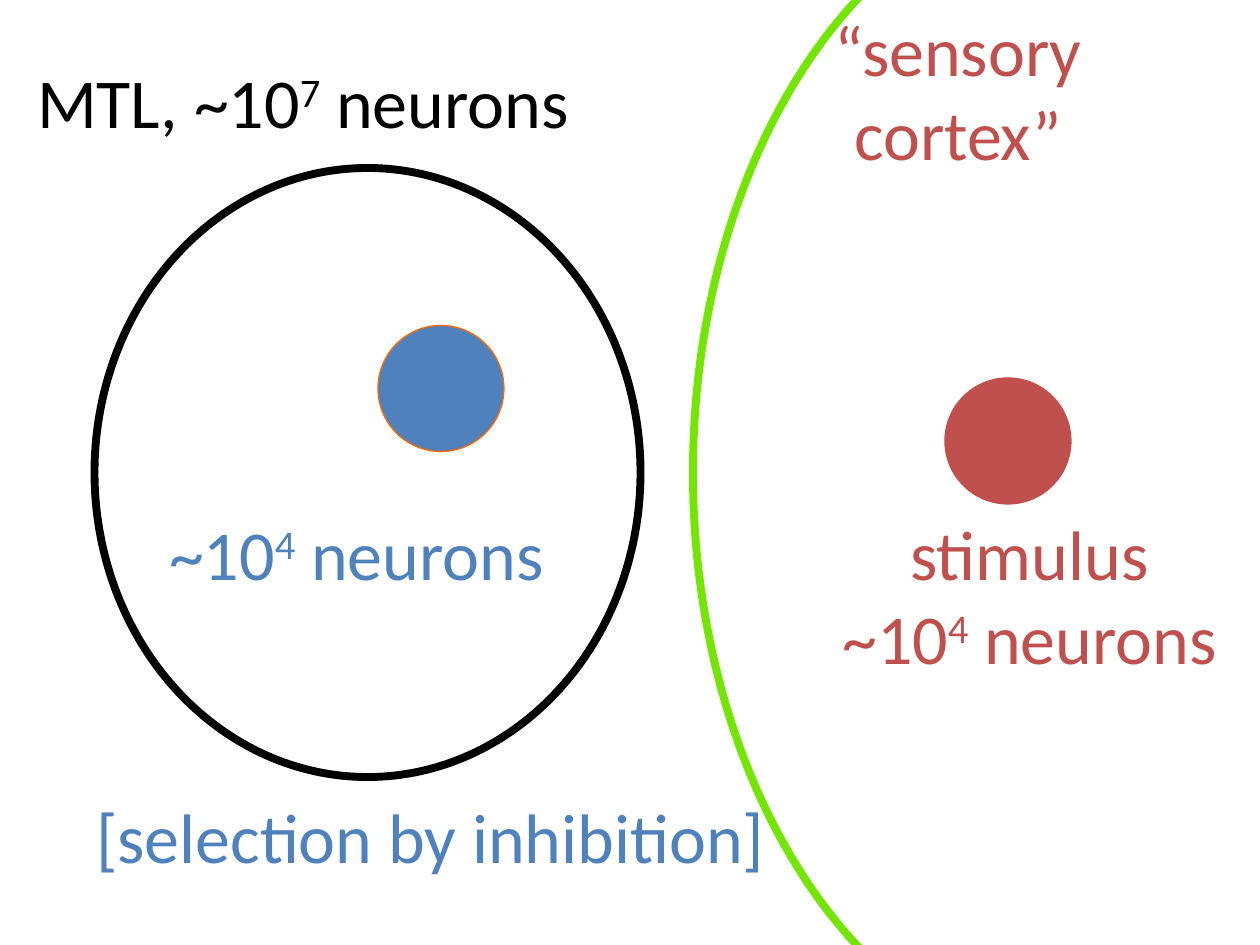
"""Build a slide relating sparse MTL neurons to a stimulus in sensory cortex."""
from dataclasses import dataclass
from typing import Optional

from pptx import Presentation
from pptx.dml.color import RGBColor
from pptx.enum.shapes import MSO_SHAPE
from pptx.enum.text import MSO_AUTO_SIZE, PP_ALIGN
from pptx.util import Emu, Inches, Pt

OVAL = MSO_SHAPE.OVAL
CENTER = PP_ALIGN.CENTER
FIT_SHAPE = MSO_AUTO_SIZE.SHAPE_TO_FIT_TEXT
COLUMNS, ROWS = 120, 90
CELL = Inches(10) // COLUMNS
BLANK_LAYOUT = 6


@dataclass(frozen=True)
class Theme:
    """Colours, type and line weights of the slide."""
    black: str = "000000"
    blue: str = "4F81BD"
    red: str = "C0504D"
    green: str = "73E500"
    orange: str = "FF6600"
    font: str = "Calibri"
    size: float = 40
    superscript: int = 30000
    outline: float = 4.5
    hairline: float = 0.75


@dataclass(frozen=True)
class Area:
    """A rectangle in grid columns and rows."""
    column: float
    row: float
    columns: float
    rows: float

    def lengths(self) -> tuple[Emu, ...]:
        """Return left, top, width and height."""
        cells = (self.column, self.row, self.columns, self.rows)
        return tuple(Emu(round(count * CELL)) for count in cells)


@dataclass(frozen=True)
class Region:
    """An ellipse standing for a group of neurons."""
    area: Area
    line: str
    weight: float
    fill: Optional[str] = None


@dataclass(frozen=True)
class Label:
    """Centred lines of text, with ^ around each superscript."""
    area: Area
    color: str
    lines: tuple[str, ...]


THEME = Theme()

MTL = Region(Area(9, 16, 52, 58), THEME.black, THEME.outline)
STIMULUS = Region(Area(90, 36, 12, 12), THEME.red, THEME.hairline, THEME.red)
CORTEX = Region(Area(66, -11, 77, 112), THEME.green, THEME.outline)
SELECTED = Region(Area(36, 31, 12, 12), THEME.orange, THEME.hairline, THEME.blue)

ITEMS = (
    MTL,
    Label(Area(1.1, 5, 55.5, 9.2), THEME.black, ("MTL, ~10^7^ neurons",)),
    Label(Area(78.1, 0, 26.3, 17.4), THEME.red, ("“sensory", "cortex”")),
    STIMULUS,
    CORTEX,
    SELECTED,
    Label(Area(14.5, 48, 38.9, 9.2), THEME.blue, ("~10^4^ neurons",)),
    Label(Area(78.6, 48, 38.9, 17.4), THEME.red, ("stimulus", "~10^4^ neurons")),
    Label(Area(7.6, 75, 66.8, 9.2), THEME.blue, ("[selection by inhibition]",)),
)


def draw_region(page, region: Region) -> None:
    """Draw one ellipse."""
    oval = page.shapes.add_shape(OVAL, *region.area.lengths())
    oval.shadow.inherit = False
    oval.line.color.rgb = RGBColor.from_string(region.line)
    oval.line.width = Pt(region.weight)
    if region.fill:
        oval.fill.solid()
        oval.fill.fore_color.rgb = RGBColor.from_string(region.fill)
    else:
        oval.fill.background()


def draw_label(page, label: Label) -> None:
    """Draw one text box and raise its superscripts."""
    frame = page.shapes.add_textbox(*label.area.lengths()).text_frame
    frame.word_wrap = False
    frame.auto_size = FIT_SHAPE
    for number, line in enumerate(label.lines):
        para = frame.add_paragraph() if number else frame.paragraphs[0]
        para.alignment = CENTER
        para.font.name = THEME.font
        para.font.size = Pt(THEME.size)
        para.font.color.rgb = RGBColor.from_string(label.color)
        for position, text in enumerate(line.split("^")):
            span = para.add_run()
            span.text = text
            if position % 2:
                span._r.get_or_add_rPr().set("baseline", str(THEME.superscript))


def main() -> None:
    """Assemble and save the deck."""
    deck = Presentation()
    deck.slide_width, deck.slide_height = CELL * COLUMNS, CELL * ROWS
    page = deck.slides.add_slide(deck.slide_layouts[BLANK_LAYOUT])
    for item in ITEMS:
        if isinstance(item, Region):
            draw_region(page, item)
        else:
            draw_label(page, item)
    deck.save("out.pptx")


if __name__ == "__main__":
    main()
